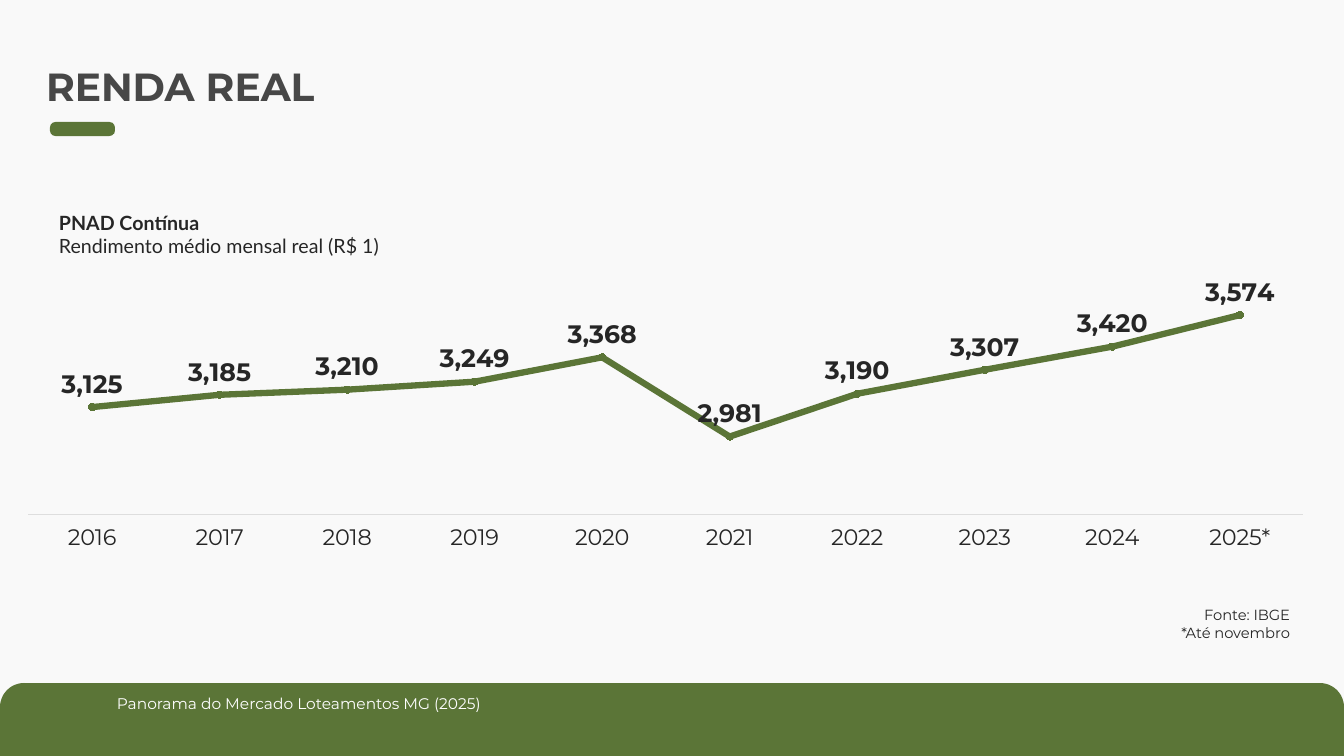
from dataclasses import dataclass

from lxml.etree import SubElement
from pptx import Presentation
from pptx.chart.data import CategoryChartData
from pptx.dml.color import RGBColor
from pptx.enum.chart import XL_CHART_TYPE, XL_LABEL_POSITION, XL_MARKER_STYLE
from pptx.enum.chart import XL_TICK_LABEL_POSITION, XL_TICK_MARK
from pptx.enum.shapes import MSO_SHAPE
from pptx.enum.text import MSO_ANCHOR, MSO_AUTO_SIZE, PP_ALIGN
from pptx.oxml.ns import qn
from pptx.util import Pt

PX = 914400 / 100.8


@dataclass(frozen=True)
class Theme:
    paper: str = "F9F9F9"
    green: str = "5B7537"
    heading: str = "474747"
    ink: str = "262626"
    rule: str = "DEDEDE"
    white: str = "FFFFFF"
    display: str = "Montserrat"
    body: str = "Lato"
    title_size: float = 28
    value_size: float = 18
    year_size: float = 16
    caption_size: float = 14
    footer_size: float = 11
    source_size: float = 10.5


def color(code):
    return RGBColor.from_string(code)


def px(*lengths):
    return [round(length * PX) for length in lengths]


def set_font(font, face, size, ink, bold=False):
    font.name = face
    font.size = Pt(size)
    font.bold = bold
    font.color.rgb = color(ink)


def write(para, text, align=PP_ALIGN.LEFT, spacing=None, **style):
    para.alignment = align
    para.line_spacing = spacing
    span = para.add_run()
    span.text = text
    set_font(span.font, **style)


class SlideBuilder:
    def __init__(self, page, theme):
        self.page = page
        self.theme = theme
        page.background.fill.solid()
        page.background.fill.fore_color.rgb = color(theme.paper)

    def title(self, text, left, top, width, height):
        box = self.page.shapes.title
        box.left, box.top, box.width, box.height = px(left, top, width, height)
        frame = box.text_frame
        frame.vertical_anchor = MSO_ANCHOR.MIDDLE
        frame.auto_size = MSO_AUTO_SIZE.NONE
        write(frame.paragraphs[0], text, spacing=0.9, face=self.theme.display,
              size=self.theme.title_size, ink=self.theme.heading, bold=True)

    def block(self, kind, left, top, width, height, *adjustments):
        shape = self.page.shapes.add_shape(kind, *px(left, top, width, height))
        shape.shadow.inherit = False
        shape.fill.solid()
        shape.fill.fore_color.rgb = color(self.theme.green)
        shape.line.fill.background()
        for index, value in enumerate(adjustments):
            shape.adjustments[index] = value

    def text(self, lines, left, top, width, height, anchor=MSO_ANCHOR.TOP,
             bold_first=False, **style):
        box = self.page.shapes.add_textbox(*px(left, top, width, height))
        frame = box.text_frame
        frame.word_wrap = True
        frame.vertical_anchor = anchor
        for index, line in enumerate(lines):
            para = frame.add_paragraph() if index else frame.paragraphs[0]
            write(para, line, bold=bold_first and index == 0, **style)

    def line_chart(self, name, values, left, top, width, height, plot_area):
        theme = self.theme
        data = CategoryChartData(number_format="#,##0")
        data.categories = list(values)
        data.add_series(name, list(values.values()))
        chart = self.page.shapes.add_chart(
            XL_CHART_TYPE.LINE_MARKERS, *px(left, top, width, height), data).chart
        chart.has_legend = False
        chart.has_title = False
        set_font(chart.font, theme.body, 10, theme.ink)
        self.place_plot(chart, plot_area)
        self.format_axes(chart)
        self.format_series(chart.plots[0])

    def place_plot(self, chart, plot_area):
        area = chart.element.find(".//" + qn("c:plotArea"))
        for old in area.findall(qn("c:layout")):
            area.remove(old)
        layout = SubElement(area, qn("c:layout"))
        area.insert(0, layout)
        manual = SubElement(layout, qn("c:manualLayout"))
        settings = {"layoutTarget": "inner", "xMode": "edge", "yMode": "edge"}
        settings.update(zip("xywh", map(str, plot_area)))
        for tag, value in settings.items():
            SubElement(manual, qn("c:" + tag)).set("val", value)

    def format_axes(self, chart):
        theme = self.theme
        years = chart.category_axis
        years.tick_label_position = XL_TICK_LABEL_POSITION.LOW
        years.major_tick_mark = years.minor_tick_mark = XL_TICK_MARK.NONE
        years.has_major_gridlines = False
        years.format.line.color.rgb = color(theme.rule)
        years.format.line.width = Pt(0.75)
        set_font(years.tick_labels.font, theme.display, theme.year_size, theme.ink)
        income = chart.value_axis
        income.minimum_scale, income.maximum_scale = 2600, 3800
        income.has_major_gridlines = False
        income.visible = False

    def format_series(self, plot):
        theme = self.theme
        plot.vary_by_categories = False
        series = plot.series[0]
        series.smooth = False
        series.format.line.color.rgb = color(theme.green)
        series.format.line.width = Pt(4.5)
        series.marker.style = XL_MARKER_STYLE.CIRCLE
        series.marker.size = 5
        series.marker.format.fill.solid()
        series.marker.format.fill.fore_color.rgb = color(theme.green)
        series.marker.format.line.color.rgb = color(theme.green)
        labels = series.data_labels
        labels.show_value = True
        labels.position = XL_LABEL_POSITION.ABOVE
        labels.number_format = "#,##0"
        labels.number_format_is_linked = False
        set_font(labels.font, theme.display, theme.value_size, theme.ink, bold=True)


def main():
    theme = Theme()
    deck = Presentation()
    deck.slide_width, deck.slide_height = px(1344, 756)
    page = deck.slides.add_slide(deck.slide_layouts[5])
    builder = SlideBuilder(page, theme)

    builder.block(MSO_SHAPE.ROUND_2_SAME_RECTANGLE, 0, 683, 1344, 73, 0.33, 0)
    builder.title("RENDA REAL", 36, 29, 1272, 119)
    income = {"2016": 3125, "2017": 3185, "2018": 3210, "2019": 3249,
              "2020": 3368, "2021": 2981, "2022": 3190, "2023": 3307,
              "2024": 3420, "2025*": 3574}
    builder.line_chart("Rendimento médio", income, 10, 207, 1312, 480,
                       (0.014, 0.129, 0.972, 0.512))
    builder.text(["PNAD Contínua", "Rendimento médio mensal real (R$ 1)"],
                 49, 182, 486, 104, anchor=MSO_ANCHOR.MIDDLE, bold_first=True,
                 face=theme.body, size=theme.caption_size, ink=theme.ink)
    builder.block(MSO_SHAPE.ROUNDED_RECTANGLE, 50, 122, 65, 14, 0.39)
    builder.text(["Fonte: IBGE", "*Até novembro"], 623, 601, 677, 45,
                 align=PP_ALIGN.RIGHT, face=theme.display,
                 size=theme.source_size, ink=theme.ink)
    builder.text(["Panorama do Mercado Loteamentos MG (2025)"], 107, 689, 708, 29,
                 face=theme.display, size=theme.footer_size, ink=theme.white)
    deck.save("out.pptx")


if __name__ == "__main__":
    main()
